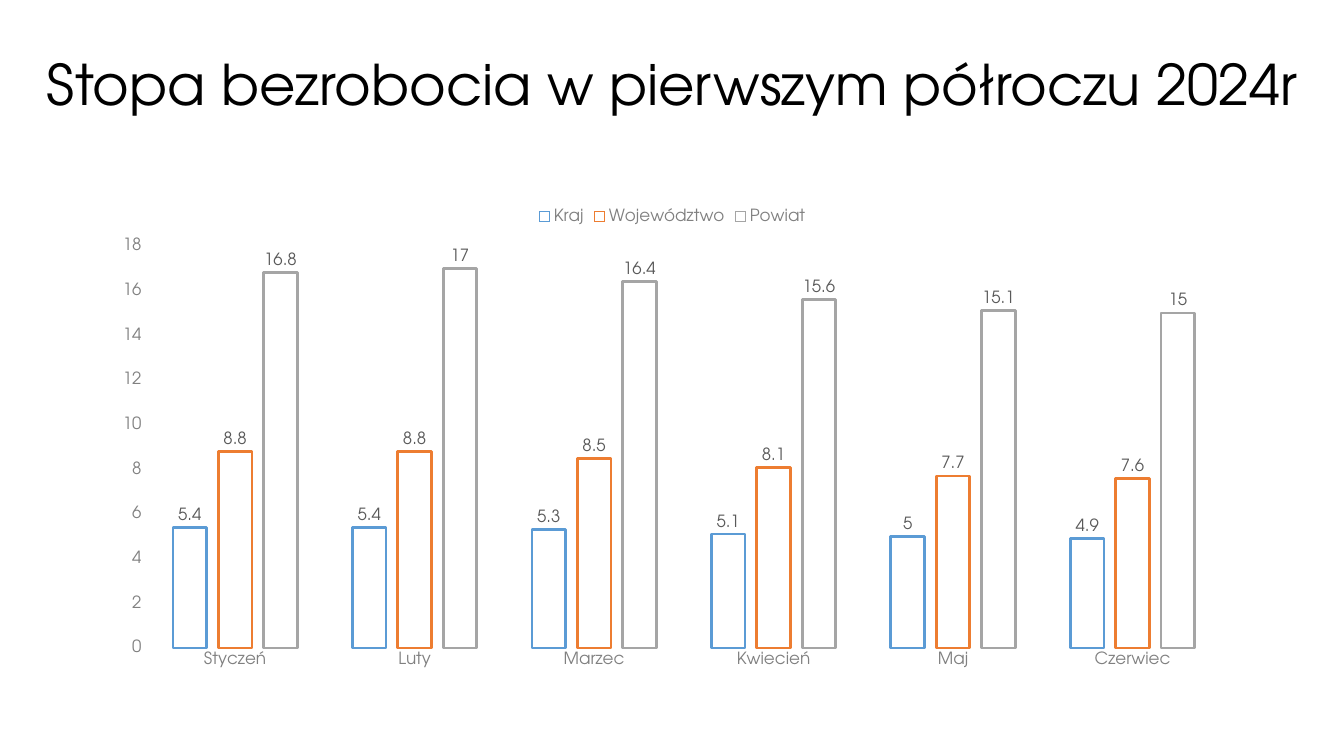
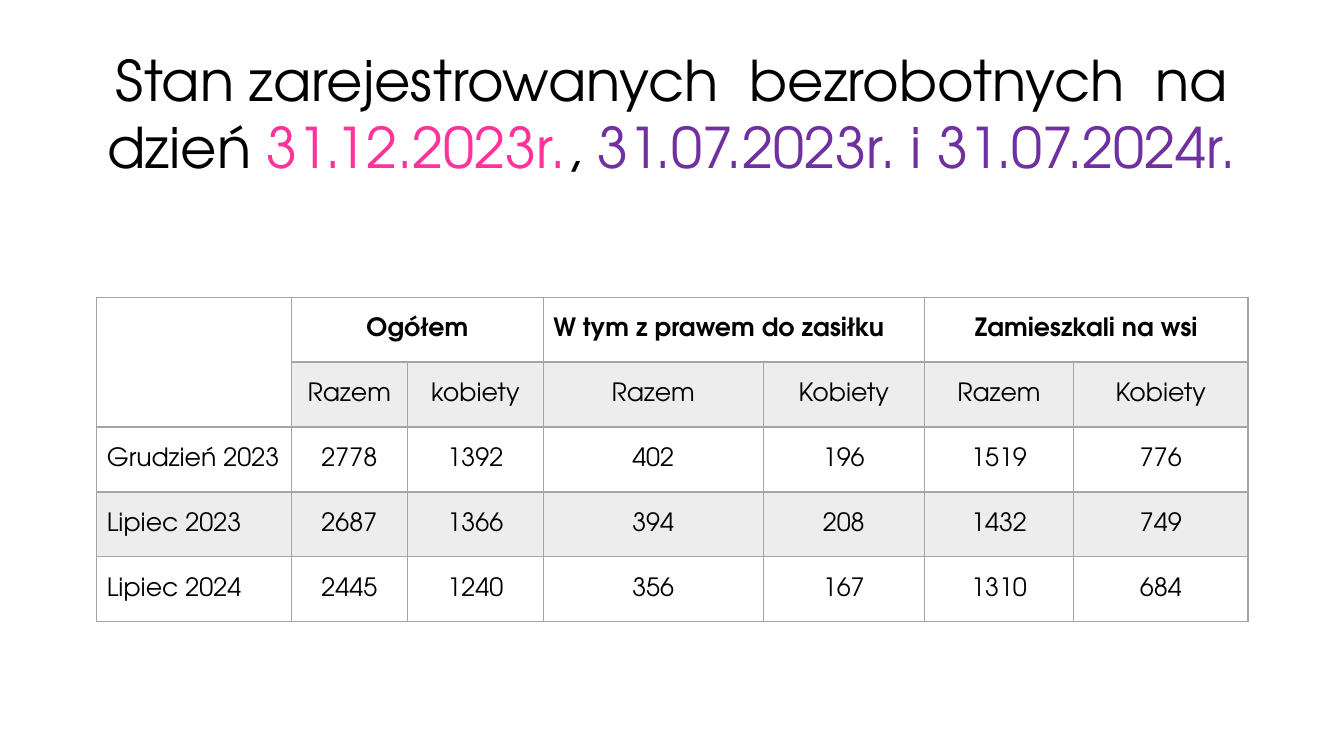
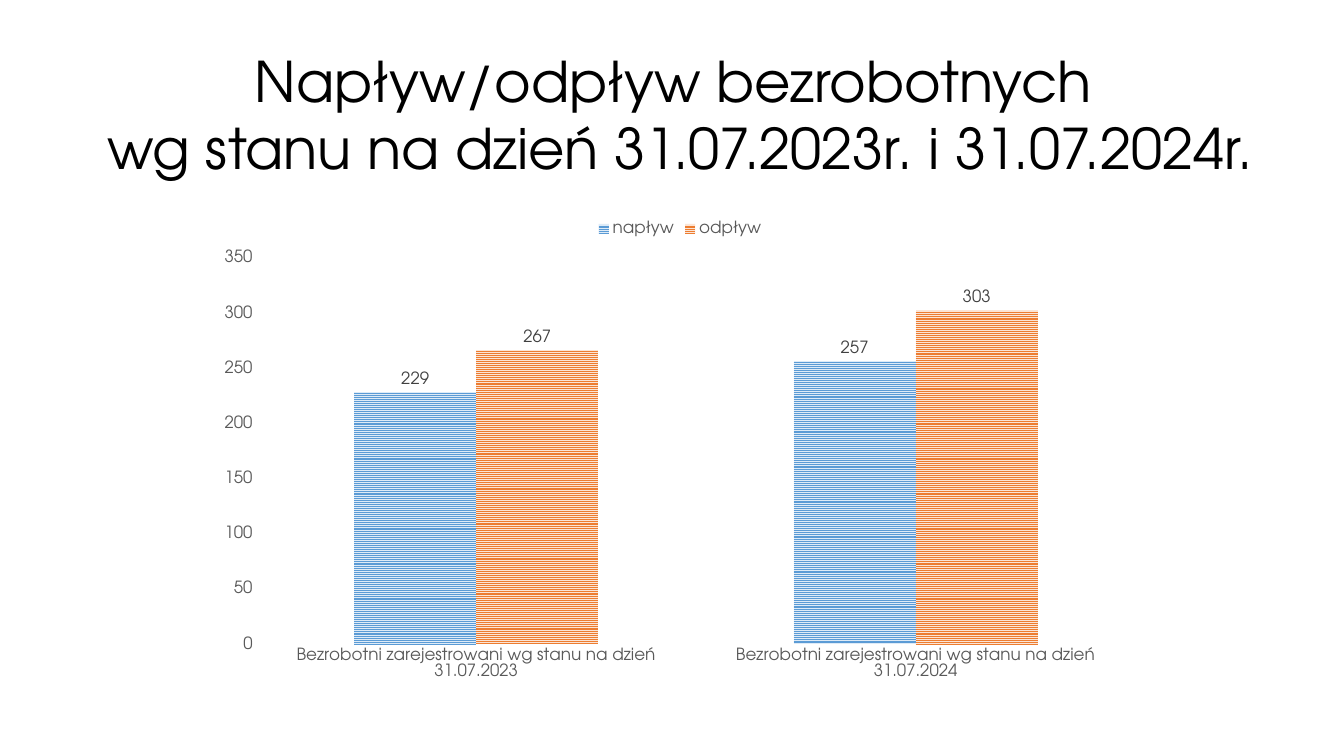
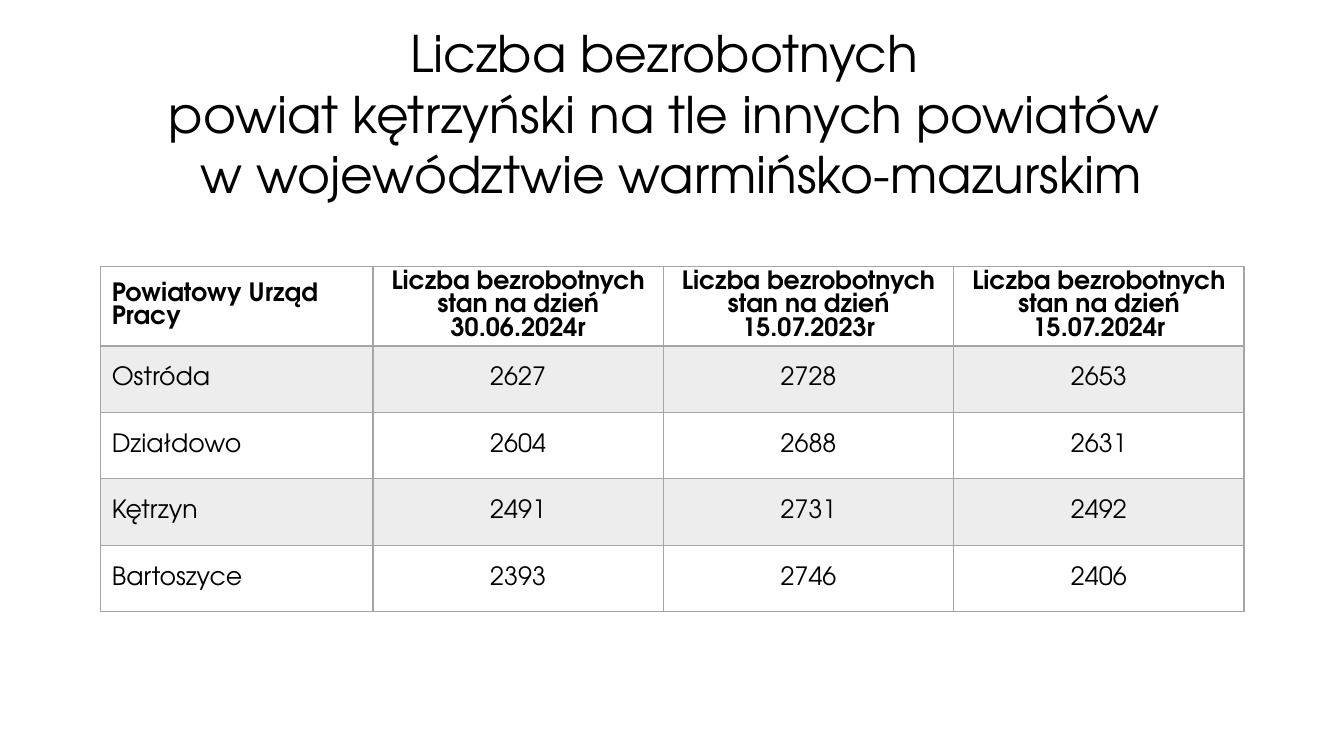
from lxml.etree import SubElement
from pptx import Presentation
from pptx.chart.data import CategoryChartData
from pptx.dml.color import RGBColor
from pptx.enum.chart import XL_CHART_TYPE, XL_LABEL_POSITION, XL_LEGEND_POSITION, XL_TICK_MARK
from pptx.enum.dml import MSO_PATTERN
from pptx.enum.text import MSO_ANCHOR, PP_ALIGN
from pptx.oxml.ns import qn
from pptx.util import Inches, Pt

W, H = Inches(13.33), Inches(7.5)
FONT = "TeX Gyre Adventor"
COLORS = {
    "text": "000000", "pink": "FF3399", "purple": "7030A0",
    "border": "A5A5A5", "band": "EDEDED",
    "blue": "5B9BD5", "orange": "ED7D31", "grey": "A5A5A5",
    "pale_blue": "DEEBF7", "pale_orange": "FBE5D6",
    "light_label": "808080", "label": "595959", "dark_label": "404040",
}
TITLE_LEADING, TABLE_LEADING = 1.2, 0.92
TABLE_SIZE = 18


def rgb(name):
    return RGBColor.from_string(COLORS[name])


def place(left, top, width, height):
    """Turn percentages of the slide into lengths."""
    return (int(W * left / 100), int(H * top / 100),
            int(W * width / 100), int(H * height / 100))


def set_attrs(obj, **values):
    for name, value in values.items():
        setattr(obj, name, value)


def set_font(font, size, color="text", bold=False):
    set_attrs(font, name=FONT, size=Pt(size), bold=bold)
    font.color.rgb = rgb(color)


def add_title(slide, box, lines, size=40):
    """Write lines of (text, colour) runs, parted by line breaks."""
    tf = slide.shapes.add_textbox(*place(*box)).text_frame
    set_attrs(tf, word_wrap=True, vertical_anchor=MSO_ANCHOR.MIDDLE)
    p = tf.paragraphs[0]
    set_attrs(p, alignment=PP_ALIGN.CENTER, line_spacing=Pt(size * TITLE_LEADING))
    for i, line in enumerate(lines):
        if i:
            p.add_line_break()
        for text, color in line:
            r = p.add_run()
            r.text = text
            set_font(r.font, size, color)


def set_borders(cell, widths):
    tc_pr = cell._tc.get_or_add_tcPr()
    for i, (side, width) in enumerate(widths.items()):
        ln = tc_pr.makeelement(qn(f"a:ln{side}"), {"w": str(Pt(width))})
        fill = SubElement(ln, qn("a:solidFill"))
        SubElement(fill, qn("a:srgbClr"), val=COLORS["border"])
        tc_pr.insert(i, ln)


def fill_cell(cell, text, row, centred, margin):
    set_attrs(cell, vertical_anchor=MSO_ANCHOR.MIDDLE,
              margin_left=Inches(margin), margin_right=Inches(margin))
    if row % 2:
        cell.fill.solid()
        cell.fill.fore_color.rgb = rgb("band")
    else:
        cell.fill.background()
    set_borders(cell, {"L": 1, "R": 1, "T": 2 if row == 1 else 1, "B": 2 if row == 0 else 1})
    p = cell.text_frame.paragraphs[0]
    set_attrs(p, alignment=PP_ALIGN.CENTER if centred else PP_ALIGN.LEFT,
              line_spacing=Pt(TABLE_SIZE * TABLE_LEADING))
    if text:
        r = p.add_run()
        r.text = text
        set_font(r.font, TABLE_SIZE, bold=row == 0)


def add_data_table(slide, box, weights, rows, merges=(), left_heads=(), margin=0.1):
    """Banded table; merges holds (row, column, last row, last column)."""
    left, top, width, height = place(*box)
    table = slide.shapes.add_table(len(rows), len(weights), left, top, width, height).table
    set_attrs(table, first_row=False, horz_banding=False)
    for col, weight in zip(table.columns, weights):
        col.width = int(width * weight / sum(weights))
    for y, row in enumerate(rows):
        for x, text in enumerate(row):
            centred = x > 0 and (y, x) not in left_heads
            is_corner = x == 0 and not text
            fill_cell(table.cell(y, x), text, 0 if is_corner else y, centred, margin)
    for y, x, last_y, last_x in merges:
        table.cell(y, x).merge(table.cell(last_y, last_x))


def outline(series, color):
    series.format.fill.background()
    set_attrs(series.format.line, width=Pt(2))
    series.format.line.color.rgb = rgb(color)


def stripes(series, color):
    fill = series.format.fill
    fill.patterned()
    fill.pattern = MSO_PATTERN.NARROW_HORIZONTAL
    fill.fore_color.rgb = rgb(color)
    fill.back_color.rgb = rgb(f"pale_{color}")


def add_columns(slide, box, categories, series, paint, gap, overlap, scale, axis_color, label_color):
    """Column chart; series holds (name, colour, values), scale (top, step)."""
    data = CategoryChartData()
    data.categories = categories
    for name, _, values in series:
        data.add_series(name, values)
    chart = slide.shapes.add_chart(XL_CHART_TYPE.COLUMN_CLUSTERED, *place(*box), data).chart
    set_font(chart.font, 10)
    set_attrs(chart, has_title=False, has_legend=True)
    set_attrs(chart.legend, position=XL_LEGEND_POSITION.TOP, include_in_layout=False)
    set_font(chart.legend.font, 12, axis_color)
    for axis in (chart.category_axis, chart.value_axis):
        set_attrs(axis, has_major_gridlines=False, major_tick_mark=XL_TICK_MARK.NONE,
                  minor_tick_mark=XL_TICK_MARK.NONE)
        axis.format.line.fill.background()
        set_font(axis.tick_labels.font, 12, axis_color)
    top, step = scale
    set_attrs(chart.value_axis, minimum_scale=0, maximum_scale=top, major_unit=step)
    plot = chart.plots[0]
    set_attrs(plot, gap_width=gap, overlap=overlap, vary_by_categories=False)
    for ser, (_, color, _) in zip(plot.series, series):
        ser.invert_if_negative = False
        paint(ser, color)
        set_attrs(ser.data_labels, show_value=True, position=XL_LABEL_POSITION.OUTSIDE_END)
        set_font(ser.data_labels.font, 12, label_color)


def unemployment_rate(slide):
    add_title(slide, (2.48, 5.33, 95.05, 11.2),
              [[("Stopa bezrobocia w pierwszym półroczu 2024r", "text")]])
    add_columns(
        slide, (7.43, 26.13, 85.22, 63.47),
        ["Styczeń", "Luty", "Marzec", "Kwiecień", "Maj", "Czerwiec"],
        [("Kraj", "blue", (5.4, 5.4, 5.3, 5.1, 5, 4.9)),
         ("Województwo", "orange", (8.8, 8.8, 8.5, 8.1, 7.7, 7.6)),
         ("Powiat", "grey", (16.8, 17, 16.4, 15.6, 15.1, 15))],
        outline, gap=164, overlap=-35, scale=(18, 2),
        axis_color="light_label", label_color="label")


def registered_unemployed(slide):
    add_title(slide, (4.65, 5.2, 90.7, 19.33),
              [[("Stan zarejestrowanych  bezrobotnych  na dzień ", "text"),
                ("31.12.2023r.", "pink"), (", ", "text"),
                ("31.07.2023r. i 31.07.2024r.", "purple")]])
    add_data_table(
        slide, (7.2, 39.33, 85.67, 42.93), (193, 115, 135, 218, 160, 148, 173),
        [("", "Ogółem", "", "W tym z prawem do zasiłku", "", "Zamieszkali na wsi", ""),
         ("", "Razem", "kobiety", "Razem", "Kobiety", "Razem", "Kobiety"),
         ("Grudzień 2023", "2778", "1392", "402", "196", "1519", "776"),
         ("Lipiec 2023", "2687", "1366", "394", "208", "1432", "749"),
         ("Lipiec 2024", "2445", "1240", "356", "167", "1310", "684")],
        merges=[(0, 0, 1, 0)] + [(0, x, 0, x + 1) for x in (1, 3, 5)],
        left_heads=[(0, 3)])


def inflow_outflow(slide):
    add_title(slide, (5.33, 5.33, 90.62, 19.33),
              [[("Napływ/odpływ bezrobotnych ", "text")],
               [("wg stanu na dzień 31.07.2023r. i 31.07.2024r.", "text")]])
    add_columns(
        slide, (15.3, 27.73, 70.59, 63.47),
        [f"Bezrobotni zarejestrowani wg stanu na dzień 31.07.{year}" for year in (2023, 2024)],
        [("napływ", "blue", (229, 257)), ("odpływ", "orange", (267, 303))],
        stripes, gap=160, overlap=0, scale=(350, 50),
        axis_color="label", label_color="dark_label")


def county_comparison(slide):
    add_title(slide, (4.35, 5.33, 91.22, 19.33),
              [[("Liczba bezrobotnych ", "text")],
               [("powiat kętrzyński na tle innych powiatów ", "text")],
               [("w województwie warmińsko-mazurskim", "text")]], size=36)
    dates = ("30.06.2024r", "15.07.2023r", "15.07.2024r")
    add_data_table(
        slide, (7.5, 35.2, 85.07, 44), (270, 288, 288, 288),
        [("Powiatowy Urząd Pracy", *(f"Liczba bezrobotnych stan na dzień {d}" for d in dates)),
         ("Ostróda", "2627", "2728", "2653"),
         ("Działdowo", "2604", "2688", "2631"),
         ("Kętrzyn", "2491", "2731", "2492"),
         ("Bartoszyce", "2393", "2746", "2406")],
        margin=0.11)


def main():
    prs = Presentation()
    set_attrs(prs, slide_width=W, slide_height=H)
    for build in (unemployment_rate, registered_unemployed, inflow_outflow, county_comparison):
        build(prs.slides.add_slide(prs.slide_layouts[6]))
    prs.save("out.pptx")


if __name__ == "__main__":
    main()
